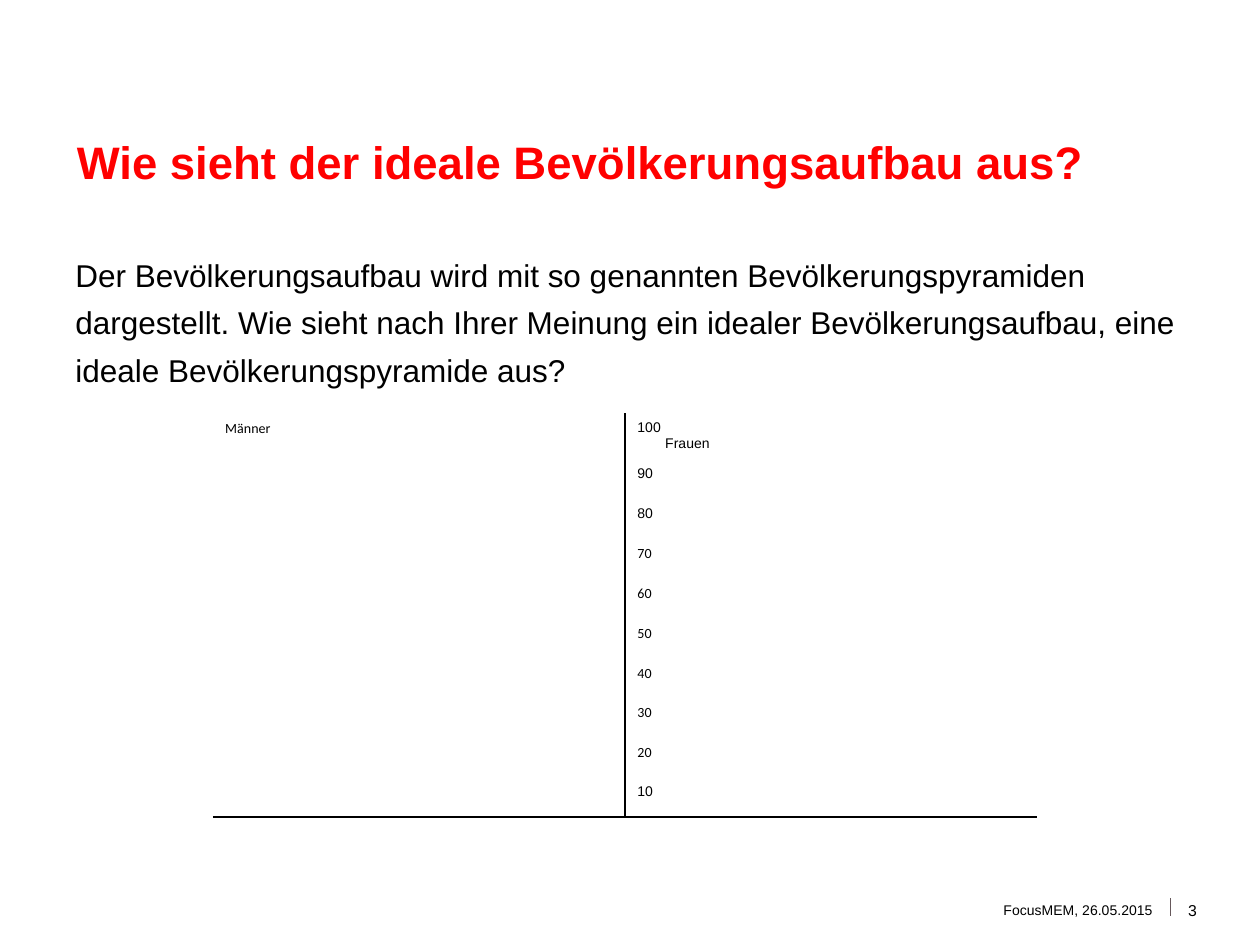
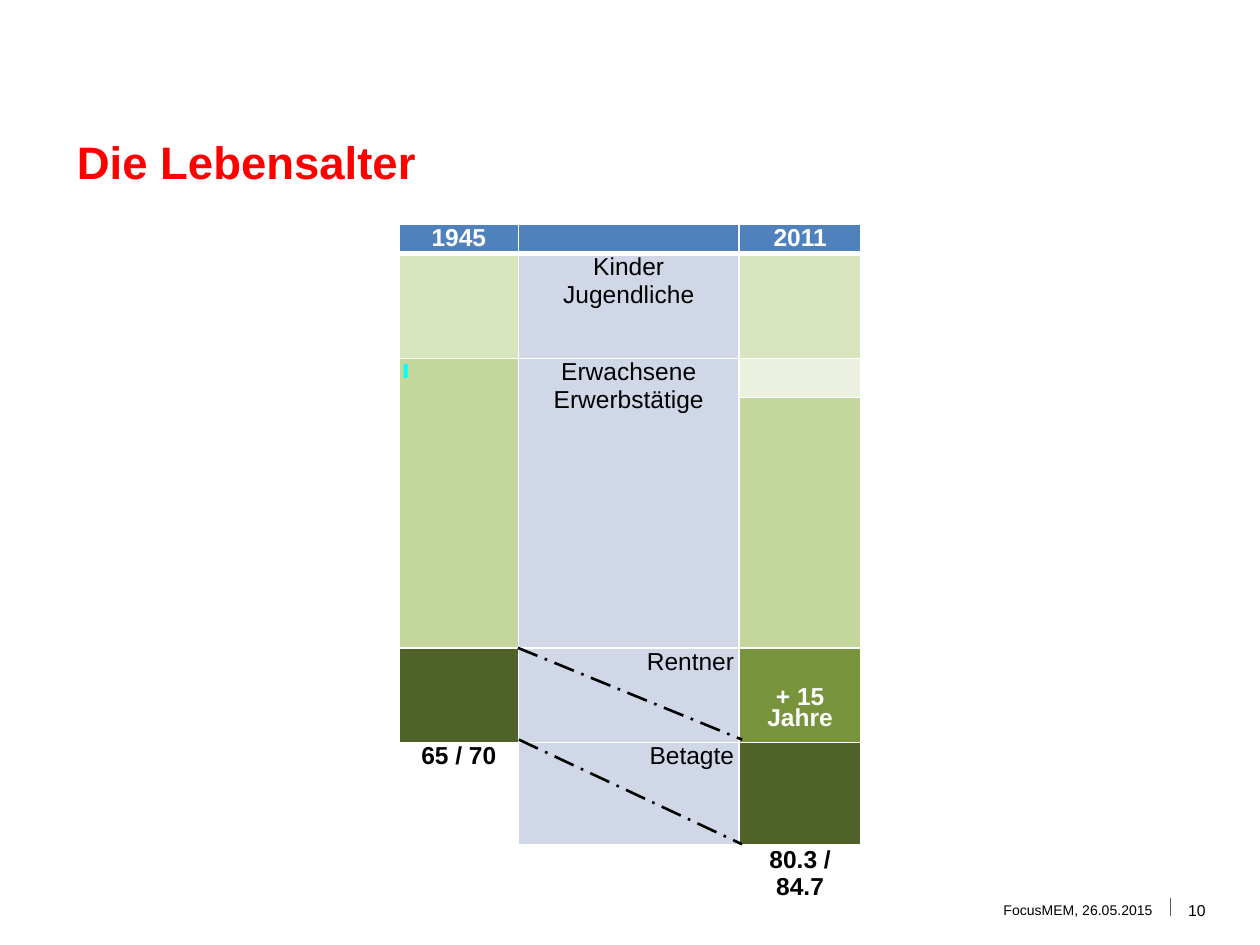
import lxml.etree
import pptx
import pptx.dml.color
import pptx.enum.dml
import pptx.enum.shapes
import pptx.enum.text
import pptx.oxml.ns
import pptx.util

Cm = pptx.util.Cm
Pt = pptx.util.Pt
RGBColor = pptx.dml.color.RGBColor
ALIGN = pptx.enum.text.PP_ALIGN
ANCHOR = pptx.enum.text.MSO_ANCHOR
qn = pptx.oxml.ns.qn

RED = RGBColor(0xFF, 0x00, 0x00)
BLACK = RGBColor(0x00, 0x00, 0x00)
WHITE = RGBColor(0xFF, 0xFF, 0xFF)
TAUPE = RGBColor(0x66, 0x58, 0x5B)
CYAN = RGBColor(0x00, 0xFF, 0xFF)
HEADER_BLUE = RGBColor(0x4F, 0x81, 0xBD)
LABEL_BLUE = RGBColor(0xD0, 0xD8, 0xE8)
CHILD_GREEN = RGBColor(0xD7, 0xE4, 0xBD)
ADULT_GREEN = RGBColor(0xC3, 0xD6, 0x9B)
YOUTH_GREEN = RGBColor(0xEB, 0xF1, 0xDE)
RETIRED_GREEN = RGBColor(0x77, 0x93, 0x3C)
AGED_GREEN = RGBColor(0x4F, 0x62, 0x28)
PLAIN_TABLE = "{2D5ABB26-0587-4C30-8999-92F81FD0307C}"


class Deck:
    def __init__(self):
        self.presentation = pptx.Presentation()
        self.presentation.slide_width = Cm(25.4)
        self.presentation.slide_height = Cm(19.05)
        self.slide = None

    def new_slide(self, title, number):
        self.slide = self.presentation.slides.add_slide(self.presentation.slide_layouts[6])
        self.line((23.6, 18.11), (23.6, 18.47), TAUPE, 0.5)
        self.text(title, (1.3, 2.51, 22.86, 1.42), 26, RED, bold=True, anchor=ANCHOR.BOTTOM)
        self.text("FocusMEM, 26.05.2015", (13.69, 18.14, 9.8, 0.41), 8,
                  align=ALIGN.RIGHT, anchor=ANCHOR.MIDDLE, inset=0)
        self.text(number, (23.7, 18.14, 1.6, 0.41), 9, anchor=ANCHOR.MIDDLE, inset=0)

    def add_words(self, paragraph, words, size, color=BLACK, bold=False, font="Arial",
                  align=ALIGN.LEFT, spacing=None):
        paragraph.alignment = align
        if spacing:
            paragraph.line_spacing = spacing
        run = paragraph.add_run()
        run.text = words
        run.font.size = Pt(size)
        run.font.name = font
        run.font.bold = bold
        run.font.color.rgb = color

    def text(self, words, place, size, color=BLACK, anchor=ANCHOR.TOP, inset=0.13, **style):
        frame = self.slide.shapes.add_textbox(*map(Cm, place)).text_frame
        frame.word_wrap = True
        frame.vertical_anchor = anchor
        frame.margin_top = frame.margin_bottom = Cm(inset)
        self.add_words(frame.paragraphs[0], words, size, color, **style)

    def line(self, start, end, color, width, dash=None):
        connector = self.slide.shapes.add_connector(
            pptx.enum.shapes.MSO_CONNECTOR.STRAIGHT, *map(Cm, start + end))
        connector.line.color.rgb = color
        connector.line.width = Pt(width)
        if dash:
            connector.line.dash_style = dash
        lxml.etree.SubElement(connector._element.spPr, qn("a:effectLst"))

    def block(self, place, color):
        block = self.slide.shapes.add_shape(
            pptx.enum.shapes.MSO_SHAPE.RECTANGLE, *map(Cm, place))
        block.shadow.inherit = False
        block.fill.solid()
        block.fill.fore_color.rgb = color
        block.line.fill.background()

    def table(self, left, top, columns, rows):
        frame = self.slide.shapes.add_table(len(rows), len(columns), Cm(left), Cm(top),
                                            Cm(sum(columns)), Cm(sum(rows)))
        table = frame.table
        table.first_row = table.horz_banding = False
        table._tbl.tblPr.find(qn("a:tableStyleId")).text = PLAIN_TABLE
        for column, width in zip(table.columns, columns):
            column.width = Cm(width)
        for row, height in zip(table.rows, rows):
            row.height = Cm(height)
        return table

    def cell(self, cell, lines=(), size=8, fill=None, borders=None, border_color=BLACK,
             margins=(0.25, 0.13), **style):
        properties = cell._tc.get_or_add_tcPr()
        for side in "LRTB":
            if borders and side in borders:
                border = lxml.etree.SubElement(properties, qn("a:ln" + side),
                                               w=str(Pt(borders[side])))
                solid = lxml.etree.SubElement(border, qn("a:solidFill"))
                lxml.etree.SubElement(solid, qn("a:srgbClr"), val=str(border_color))
        if fill is None:
            cell.fill.background()
        else:
            cell.fill.solid()
            cell.fill.fore_color.rgb = fill
        cell.margin_left = cell.margin_right = Cm(margins[0])
        cell.margin_top = cell.margin_bottom = Cm(margins[1])
        frame = cell.text_frame
        for index, words in enumerate(lines):
            paragraph = frame.add_paragraph() if index else frame.paragraphs[0]
            self.add_words(paragraph, words, size, **style)
        if not lines:
            frame.paragraphs[0]._p.get_or_add_endParaRPr().set("sz", "800")


def pyramid_slide(deck):
    deck.new_slide("Wie sieht der ideale Bevölkerungsaufbau aus?", "3")
    deck.text("Der Bevölkerungsaufbau wird mit so genannten Bevölkerungspyramiden dargestellt. "
              "Wie sieht nach Ihrer Meinung ein idealer Bevölkerungsaufbau, eine ideale "
              "Bevölkerungspyramide aus?", (1.27, 4.83, 22.86, 12.09), 18, spacing=1.26)
    pyramid = deck.table(4.29, 8.33, [8.31] * 2, [0.9] + [0.8] * 9)
    for row, age in enumerate(range(100, 0, -10)):
        base = {"B": 1} if age == 10 else {}
        men = ["Männer"] if age == 100 else []
        women = ["100", "Frauen"] if age == 100 else [str(age)]
        font = "Calibri" if 20 <= age <= 70 else "Arial"
        deck.cell(pyramid.cell(row, 0), men, borders={"R": 1, **base}, font="Calibri")
        deck.cell(pyramid.cell(row, 1), women, borders={"L": 1, **base}, font=font)
    women_label = pyramid.cell(0, 1).text_frame.paragraphs[1]
    women_label._p.get_or_add_pPr().set("marL", str(Cm(0.56)))


def ages_slide(deck):
    deck.new_slide("Die Lebensalter", "10")
    fills = [
        [HEADER_BLUE] * 3,
        [CHILD_GREEN, LABEL_BLUE, CHILD_GREEN],
        [ADULT_GREEN, LABEL_BLUE, YOUTH_GREEN],
        [ADULT_GREEN, LABEL_BLUE, ADULT_GREEN],
        [AGED_GREEN, LABEL_BLUE, RETIRED_GREEN],
        [WHITE, LABEL_BLUE, AGED_GREEN],
        [WHITE] * 3,
    ]
    heading = {"bold": True, "color": WHITE}
    entries = {
        (0, 0): (["1945"], heading),
        (0, 2): (["2011"], heading),
        (1, 1): (["Kinder", "Jugendliche"], {}),
        (2, 1): (["Erwachsene Erwerbstätige"], {}),
        (4, 1): (["Rentner"], {"align": ALIGN.RIGHT}),
        (4, 2): (["+ 15 Jahre"], {**heading, "spacing": Pt(12)}),
        (5, 0): (["65 / 70"], {"bold": True}),
        (5, 1): (["Betagte"], {"align": ALIGN.RIGHT}),
        (6, 2): (["80.3 / 84.7"], {"bold": True}),
    }
    ages = deck.table(8.05, 4.52, [2.4, 4.45, 2.46], [0.56, 2.11, 0.79, 5.05, 1.9, 2.09, 1.15])
    for column in (0, 1):
        ages.cell(2, column).merge(ages.cell(3, column))
    for row, row_fills in enumerate(fills):
        borders = {"L": 1, "R": 1, "T": 3 if row in (1, 6) else 1, "B": 3 if row in (0, 5) else 1}
        for column, fill in enumerate(row_fills):
            lines, style = entries.get((row, column), ([], {}))
            deck.cell(ages.cell(row, column), lines, 14, fill, borders, WHITE, (0.1, 0),
                      **{"align": ALIGN.CENTER, **style})
    ages.cell(4, 2).margin_top = Pt(24)
    deck.block((8.14, 7.34, 0.08, 0.28), CYAN)
    dash = pptx.enum.dml.MSO_LINE.LONG_DASH_DOT
    deck.line((10.46, 14.91), (14.96, 17.02), BLACK, 1.5, dash)
    deck.line((10.44, 13.06), (14.96, 14.91), BLACK, 1.5, dash)


def main():
    deck = Deck()
    pyramid_slide(deck)
    ages_slide(deck)
    deck.presentation.save("out.pptx")


if __name__ == "__main__":
    main()
